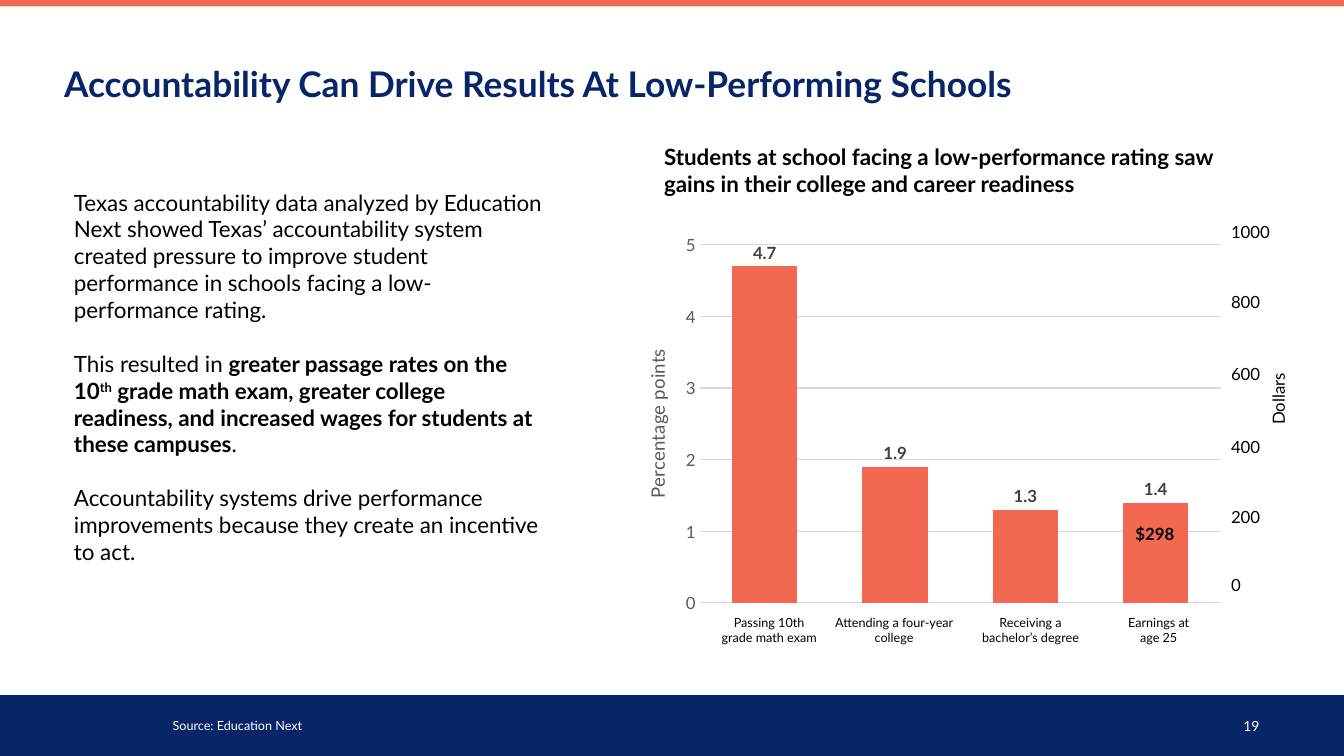
from lxml.etree import SubElement
from pptx import Presentation
from pptx.chart.data import CategoryChartData
from pptx.dml.color import RGBColor
from pptx.enum.chart import XL_CHART_TYPE, XL_LABEL_POSITION, XL_TICK_MARK
from pptx.enum.shapes import MSO_SHAPE
from pptx.enum.text import MSO_ANCHOR, MSO_AUTO_SIZE, PP_ALIGN
from pptx.oxml import parse_xml
from pptx.oxml.ns import nsdecls, qn
from pptx.util import Pt

NAVY, CORAL, WHITE, BLACK = "082567", "F26851", "FFFFFF", "000000"
GREY, LABEL_GREY, GRID_GREY = "595959", "404040", "D9D9D9"


def rgb(colour):
    return RGBColor.from_string(colour)


class SlideBuilder:
    """Holds the style and the current slide and draws each kind of element."""

    font_name = "Lato"
    scale = 9525

    def __init__(self, deck):
        deck.slide_width, deck.slide_height = self.emu(1280, 720)
        self.page = deck.slides.add_slide(deck.slide_layouts[6])

    def emu(self, *lengths):
        return [length * self.scale for length in lengths]

    def style(self, font, size, colour=BLACK, bold=False):
        font.name, font.size, font.bold = self.font_name, Pt(size), bold
        font.color.rgb = rgb(colour)

    def bar(self, place, fill):
        bar = self.page.shapes.add_shape(MSO_SHAPE.RECTANGLE, *self.emu(*place))
        bar.shadow.inherit = False
        bar.fill.solid()
        bar.fill.fore_color.rgb = rgb(fill)
        bar.line.fill.background()
        return bar

    def badge(self, place, fill, words, size):
        frame = self.bar(place, fill).text_frame
        frame.margin_left = frame.margin_right = 0
        frame.margin_top = frame.margin_bottom = 0
        frame.vertical_anchor = MSO_ANCHOR.MIDDLE
        para = frame.paragraphs[0]
        para.text, para.alignment = words, PP_ALIGN.CENTER
        self.style(para.font, size, bold=True)

    def text(self, place, paragraphs, size, colour=BLACK, bold=False, gap=0,
             align=PP_ALIGN.LEFT, anchor=MSO_ANCHOR.TOP, grow=True):
        box = self.page.shapes.add_textbox(*self.emu(*place))
        frame = box.text_frame
        frame.word_wrap, frame.vertical_anchor = True, anchor
        frame.auto_size = MSO_AUTO_SIZE.SHAPE_TO_FIT_TEXT if grow else MSO_AUTO_SIZE.NONE
        for index, spans in enumerate(paragraphs):
            para = frame.add_paragraph() if index else frame.paragraphs[0]
            para.alignment = align
            if index:
                para.space_before = Pt(gap)
            self.style(para.font, size, colour, bold)
            for words, *marks in spans:
                span = para.add_run()
                span.text = words
                if "bold" in marks:
                    span.font.bold = True
                if "super" in marks:
                    span.font._element.set("baseline", "30000")
        return box

    def title(self, place, words, size):
        box = self.text(place, [[(words,)]], size, NAVY, True,
                        anchor=MSO_ANCHOR.BOTTOM, grow=False)
        frame = box.text_frame
        frame.margin_left = frame.margin_right = 0
        frame.margin_top = frame.margin_bottom = 0
        frame.paragraphs[0].line_spacing = 0.9

    def column_chart(self, place, values, axis_title, plot_place):
        data = CategoryChartData()
        data.categories = [str(number + 1) for number in range(len(values))]
        data.add_series("Series 1", values)
        chart = self.page.shapes.add_chart(
            XL_CHART_TYPE.COLUMN_CLUSTERED, *self.emu(*place), data).chart
        self.style(chart.font, 10)
        chart.has_legend = chart.has_title = False
        chart.category_axis.visible = False

        axis = chart.value_axis
        axis.minimum_scale, axis.maximum_scale, axis.major_unit = 0, 5, 1
        axis.major_tick_mark = axis.minor_tick_mark = XL_TICK_MARK.NONE
        axis.format.line.fill.background()
        axis.major_gridlines.format.line.color.rgb = rgb(GRID_GREY)
        axis.major_gridlines.format.line.width = Pt(0.75)
        self.style(axis.tick_labels.font, 12, GREY)
        para = axis.axis_title.text_frame.paragraphs[0]
        para.text = axis_title
        self.style(para.font, 13.3, GREY)

        plot = chart.plots[0]
        plot.gap_width, plot.overlap = 100, -27
        plot.vary_by_categories = False
        series = plot.series[0]
        series.format.fill.solid()
        series.format.fill.fore_color.rgb = rgb(CORAL)
        labels = series.data_labels
        labels.show_value, labels.position = True, XL_LABEL_POSITION.OUTSIDE_END
        self.style(labels.font, 12, LABEL_GREY, True)
        self.place_plot(chart.element.find(".//" + qn("c:plotArea")), plot_place)

    def place_plot(self, area, plot_place):
        for old in area.findall(qn("c:layout")):
            area.remove(old)
        layout = parse_xml(f'<c:layout {nsdecls("c")}><c:manualLayout/></c:layout>')
        settings = [("layoutTarget", "inner"), ("xMode", "edge"), ("yMode", "edge")]
        settings += zip("xywh", plot_place)
        for name, value in settings:
            SubElement(layout[0], qn(f"c:{name}")).set("val", str(value))
        area.insert(0, layout)
        area.append(parse_xml(
            f'<c:spPr {nsdecls("c", "a")}><a:solidFill><a:srgbClr val="{WHITE}"/>'
            "</a:solidFill></c:spPr>"))


def main():
    deck = Presentation()
    slide = SlideBuilder(deck)
    slide.bar((0, 662, 1280, 58), NAVY)
    slide.text((1117, 672, 92, 38), [[("19",)]], 10, WHITE, align=PP_ALIGN.RIGHT,
               anchor=MSO_ANCHOR.MIDDLE, grow=False)
    slide.bar((0, 0, 1280, 6), "F26852")
    slide.title((61, 55, 975, 45),
                "Accountability Can Drive Results At Low-Performing Schools", 25.2)

    slide.column_chart((610, 209, 612, 445), (4.7, 1.9, 1.3, 1.4),
                       "Percentage points", (0.092, 0.054, 0.811, 0.767))
    categories = [
        (674, 117, "Passing 10th grade math exam"),
        (780, 143, "Attending a four-year college"),
        (919, 125, "Receiving a bachelor’s degree"),
        (1057, 93, "Earnings at age 25"),
    ]
    for left, width, name in categories:
        slide.text((left, 581, width, 43), [[(name,)]], 9, align=PP_ALIGN.CENTER)
    slide.badge((1070, 497, 60, 22), CORAL, "$298", 12)
    for dollars, top in zip(range(1000, -1, -200), (206, 273, 342, 411, 478, 543)):
        slide.text((1163, top, 60, 32), [[(str(dollars),)]], 12)
    slide.text((623, 132, 544, 68), [[(
        "Students at school facing a low-performance rating saw gains in their "
        "college and career readiness",)]], 16, bold=True)
    slide.text((1173, 354, 90, 30), [[("Dollars",)]], 12).rotation = 270

    slide.text((61, 175, 468, 372), [
        [("Texas accountability data analyzed by Education Next showed Texas’ "
          "accountability system created pressure to improve student performance "
          "in schools facing a low-performance rating.",)],
        [("This resulted in ",),
         ("greater passage rates on the 10", "bold"),
         ("th", "bold", "super"),
         (" grade math exam, greater college readiness, and increased wages for "
          "students at these campuses", "bold"),
         (".",)],
        [("Accountability systems drive performance improvements because they "
          "create an incentive to act.",)],
    ], 16, gap=19.2)
    slide.text((155, 679, 310, 24), [[("Source: Education Next",)]], 9, WHITE)
    deck.save("out.pptx")


if __name__ == "__main__":
    main()
